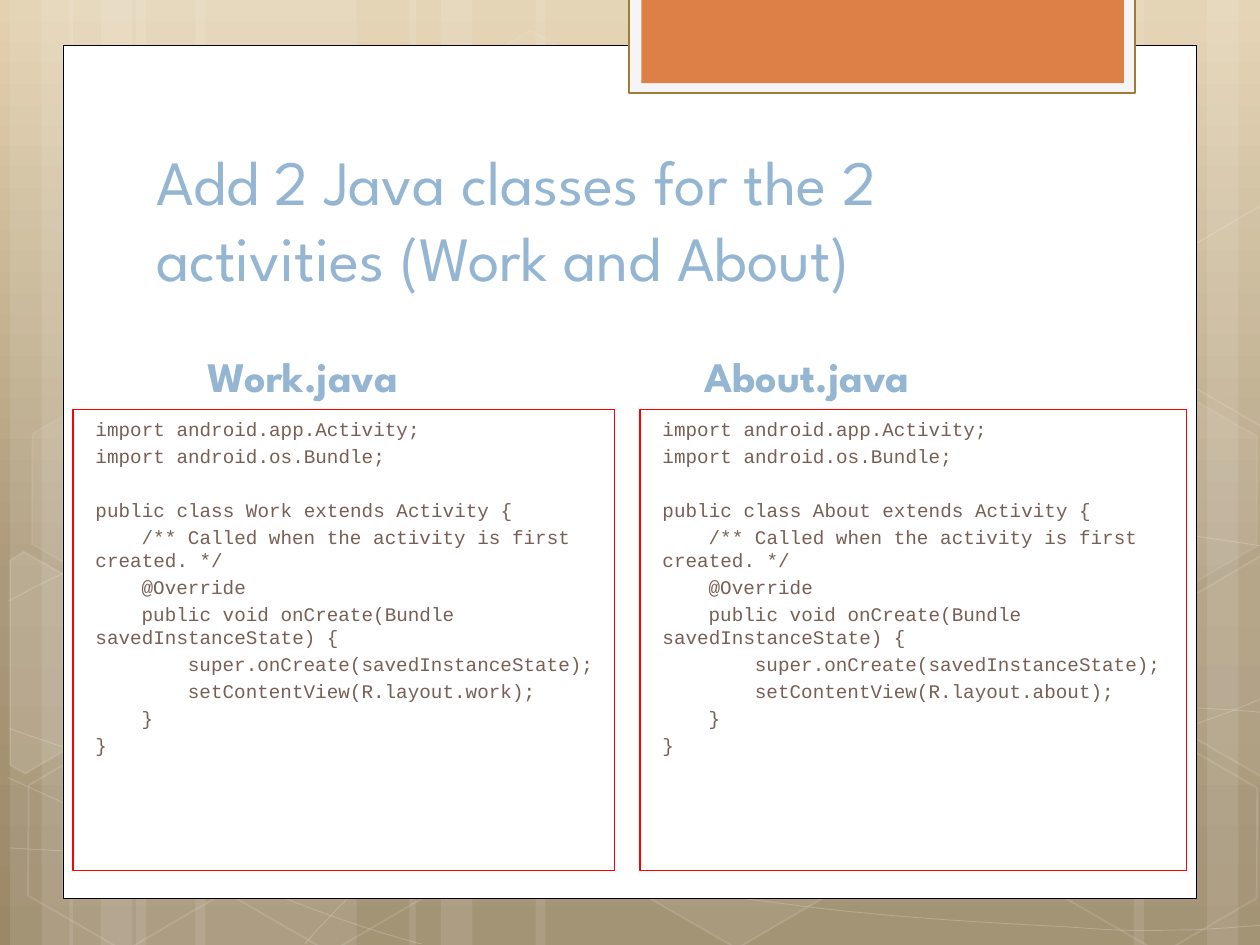
from pptx import Presentation
from pptx import util as u
from pptx.dml.color import RGBColor
from pptx.enum import shapes, text
from pptx.oxml import parse_xml
from pptx.oxml.ns import nsdecls, qn

WHITE = RGBColor(0xFF, 0xFF, 0xFF)
BLACK = RGBColor(0x00, 0x00, 0x00)
RED = RGBColor(0xFF, 0x00, 0x00)
BLUE = RGBColor(0x94, 0xB6, 0xD2)
BROWN = RGBColor(0x77, 0x5F, 0x55)
ORANGE = RGBColor(0xDD, 0x80, 0x47)
GOLD = RGBColor(0xA1, 0x7C, 0x36)
PALE = RGBColor(0xF5, 0xF5, 0xF5)
SKY = [(0, RGBColor(0xE3, 0xD1, 0xAF)), (62, RGBColor(0xAB, 0x99, 0x79)),
       (100, RGBColor(0x9A, 0x88, 0x67))]

RECT = shapes.MSO_SHAPE.RECTANGLE
HEXAGON = shapes.MSO_SHAPE.HEXAGON

# Background bars: left, width
BARS = [(1.08, 1.75), (0.08, 0.5), (0.33, 0.83), (1.55, 1.75), (0.55, 0.5), (0.8, 0.83),
        (7.33, 1.75), (9.58, 0.5), (9, 0.83), (4.25, 3.08), (3.25, 0.5), (3.5, 0.83)]

# Background waves: start point, then cubic segments of two controls and an end
WAVES = [
    [(0.07, 6.73), (0.61, 6.76), (1.15, 6.79), (1.9, 6.78), (2.65, 6.77), (3.58, 6.75),
     (4.58, 6.65), (5.58, 6.55), (7, 6.36), (7.92, 6.17), (8.83, 5.98), (9.77, 5.68),
     (10.07, 5.51)],
    [(0.07, 4.77), (0.36, 4.61), (0.65, 4.46), (1.21, 4.31), (1.78, 4.16), (2.59, 3.94),
     (3.47, 3.87), (4.36, 3.8), (5.44, 3.79), (6.54, 3.87), (7.64, 3.95), (9.47, 4.26),
     (10.07, 4.34)],
    [(0.06, 6.17), (1.27, 6.72), (2.47, 7.27), (3.34, 7.49)],
    [(0.07, 5.78), (0.38, 5.89), (0.7, 6), (1.28, 6.16), (1.86, 6.31), (2.73, 6.56),
     (3.57, 6.73), (4.4, 6.9), (5.45, 7.08), (6.28, 7.18), (7.11, 7.29), (8, 7.33),
     (8.53, 7.36), (9.05, 7.4), (9.19, 7.38), (9.45, 7.38), (9.71, 7.37), (9.89, 7.35),
     (10.07, 7.34)],
    [(2.42, 7.49), (2.6, 7.29), (2.78, 7.09), (3.02, 6.91), (3.26, 6.73), (3.6, 6.53),
     (3.88, 6.39), (4.16, 6.25), (4.33, 6.19), (4.7, 6.09), (5.06, 5.99), (5.73, 5.85),
     (6.08, 5.78), (6.44, 5.71), (6.49, 5.71), (6.8, 5.69), (7.11, 5.66), (7.6, 5.63),
     (7.94, 5.62), (8.29, 5.61), (8.86, 5.62), (8.86, 5.62), (9.08, 5.62), (9.31, 5.62),
     (9.53, 5.62), (9.71, 5.63), (9.88, 5.64), (9.97, 5.65), (10.06, 5.66), (10.03, 5.65),
     (10.06, 5.66)],
]

# Whole hexagons: left, top, fill opacity (None is unfilled), line opacity
HEXAGONS = [(3.34, 0.36, 4, 8), (4.97, 5.89, 6, 12), (0.11, 5.91, None, 12),
            (0.14, 3.12, 7, 8), (1.74, 5.92, None, 12), (7.53, 4.53, 10, 12),
            (8.34, 5.93, None, 12), (8.34, 3.14, 7, 8)]

# Hexagons cut by the slide edge: corners, fill opacity
CUT_HEXAGONS = [
    ([(0.08, 4.45), (0.19, 4.38), (0.96, 4.82), (0.95, 5.7), (0.2, 6.14), (0.08, 6.07)], 10),
    ([(9.26, 4.85), (10.01, 4.41), (10.09, 4.46), (10.09, 6.13), (10.02, 6.17),
      (9.26, 5.73)], 4),
    ([(9.26, 2.07), (10.01, 1.63), (10.1, 1.68), (10.09, 3.35), (10.02, 3.39),
      (9.26, 2.95)], None),
]

# Activity classes: name, heading left, code box left, code box width
ACTIVITIES = [("Work", 1.55, 0.58, 4.3), ("About", 5.49, 5.08, 4.34)]


def code_lines(name):
    """Indent level, text and whether a gap comes before the line."""
    return [(0, "import android.app.Activity;", False),
            (0, "import android.os.Bundle;", False),
            (0, f"public class {name} extends Activity {{", True),
            (1, "/** Called when the activity is first created. */", False),
            (1, "@Override", False),
            (1, "public void onCreate(Bundle savedInstanceState) {", False),
            (2, "super.onCreate(savedInstanceState);", False),
            (2, f"setContentView(R.layout.{name.lower()});", False),
            (1, "}", False),
            (0, "}", False)]


class Deck:
    heading_font = "League Spartan"
    code_font = "Courier New"
    code_size = 11
    code_pitch = 13.2
    code_gap = 2.2

    def __init__(self, slide):
        self.slide = slide

    def background(self, stops):
        fill = self.slide.background.fill
        fill.gradient()
        fill.gradient_angle = 270
        stop_list = next(self.slide.element.iter(qn("a:gsLst")))
        stop_list.clear()
        for position, color in stops:
            stop_list.append(parse_xml(f'<a:gs {nsdecls("a")} pos="{position * 1000}">'
                                       f'<a:srgbClr val="{color}"/></a:gs>'))

    def _fade(self, paint, opacity):
        if opacity < 100:
            color = next(paint.iter(qn("a:srgbClr")))
            color.append(parse_xml(f'<a:alpha {nsdecls("a")} val="{opacity * 1000}"/>'))

    def style(self, shape, fill=None, line=None, width=1, fill_opacity=100, line_opacity=100):
        shape.shadow.inherit = False
        if fill is None or fill_opacity is None:
            shape.fill.background()
        else:
            shape.fill.solid()
            shape.fill.fore_color.rgb = fill
            self._fade(shape.element.spPr.find(qn("a:solidFill")), fill_opacity)
        if line is None:
            shape.line.fill.background()
        else:
            shape.line.color.rgb = line
            shape.line.width = u.Pt(width)
            self._fade(shape.element.spPr.find(qn("a:ln")), line_opacity)
        return shape

    def shape(self, kind, box, **look):
        return self.style(self.slide.shapes.add_shape(kind, *map(u.Inches, box)), **look)

    def hexagon(self, left, top, **look):
        hexagon = self.shape(HEXAGON, (left, top, 1.75, 1.52), **look)
        hexagon.adjustments[0] = 0.285
        hexagon.adjustments[1] = 1.155
        hexagon.rotation = 30

    def outline(self, points, close, **look):
        start, *rest = [(u.Inches(x), u.Inches(y)) for x, y in points]
        builder = self.slide.shapes.build_freeform(*start)
        builder.add_line_segments(rest, close=close)
        return self.style(builder.convert_to_shape(), **look)

    def wave(self, points, **look):
        """Join each three points after the start into one cubic segment."""
        wave = self.outline(points, False, **look)
        lines = list(wave.element.iter(qn("a:lnTo")))
        for i in range(0, len(lines), 3):
            curve = parse_xml(f'<a:cubicBezTo {nsdecls("a")}/>')
            lines[i].addprevious(curve)
            for line in lines[i:i + 3]:
                curve.append(line[0])
                line.getparent().remove(line)

    def run(self, paragraph, words, font, size, color, bold=False):
        run = paragraph.add_run()
        run.text = words
        run.font.name, run.font.size, run.font.bold = font, u.Pt(size), bold
        run.font.color.rgb = color

    def heading(self, words, box, size, bold=False, pitch=None):
        frame = self.slide.shapes.add_textbox(*map(u.Inches, box)).text_frame
        frame.word_wrap = True
        frame.vertical_anchor = text.MSO_ANCHOR.BOTTOM
        paragraph = frame.paragraphs[0]
        if pitch:
            paragraph.line_spacing = u.Pt(pitch)
        self.run(paragraph, words, self.heading_font, size, BLUE, bold)

    def code(self, lines, box):
        frame = self.shape(RECT, box, line=RED, width=0.75).text_frame
        frame.word_wrap = True
        frame.vertical_anchor = text.MSO_ANCHOR.TOP
        frame.margin_top = u.Inches(0.06)
        for i, (level, words, gap) in enumerate(lines):
            paragraph = frame.add_paragraph() if i else frame.paragraphs[0]
            paragraph.alignment = text.PP_ALIGN.LEFT
            paragraph.line_spacing = u.Pt(self.code_pitch)
            if i:
                blank_line = self.code_pitch + self.code_gap if gap else 0
                paragraph.space_before = u.Pt(self.code_gap + blank_line)
            # One level is four characters, each 0.6 of the font size wide
            properties = paragraph._p.get_or_add_pPr()
            properties.set("marL", str(u.Inches(0.08)))
            properties.set("indent", str(u.Pt(level * 4 * 0.6 * self.code_size)))
            self.run(paragraph, words, self.code_font, self.code_size, BROWN)


def main():
    prs = Presentation()
    prs.slide_width, prs.slide_height = u.Inches(10), u.Inches(7.5)
    deck = Deck(prs.slides.add_slide(prs.slide_layouts[6]))

    # Background pattern
    deck.background(SKY)
    for left, width in BARS:
        deck.shape(RECT, (left, 0, width, 7.5), fill=WHITE, fill_opacity=10)
    for points in WAVES:
        deck.wave(points, line=WHITE, width=0.5, line_opacity=20)
    for left, top, fill_opacity, line_opacity in HEXAGONS:
        deck.hexagon(left, top, fill=WHITE, line=WHITE,
                     fill_opacity=fill_opacity, line_opacity=line_opacity)
    for corners, fill_opacity in CUT_HEXAGONS:
        deck.outline(corners, True, fill=WHITE, line=WHITE,
                     fill_opacity=fill_opacity, line_opacity=12)

    # Page and tab
    deck.shape(RECT, (0.5, 0.36, 9, 6.77), fill=WHITE, line=BLACK, width=0.5)
    deck.shape(RECT, (4.99, -0.02, 4.02, 0.76), fill=PALE, line=GOLD, width=1.25)
    deck.shape(RECT, (5.09, -0.02, 3.83, 0.68), fill=ORANGE)

    # Title and the two classes
    deck.heading("Add 2 Java classes for the 2 activities (Work and About)",
                 (1.14, 1.13, 7.68, 1.25), 36, pitch=43.4)
    for name, heading_left, code_left, code_width in ACTIVITIES:
        deck.heading(f"{name}.java", (heading_left, 2.53, 3.34, 0.7), 24, bold=True)
        deck.code(code_lines(name), (code_left, 3.25, code_width, 3.66))

    prs.save("out.pptx")


if __name__ == "__main__":
    main()
